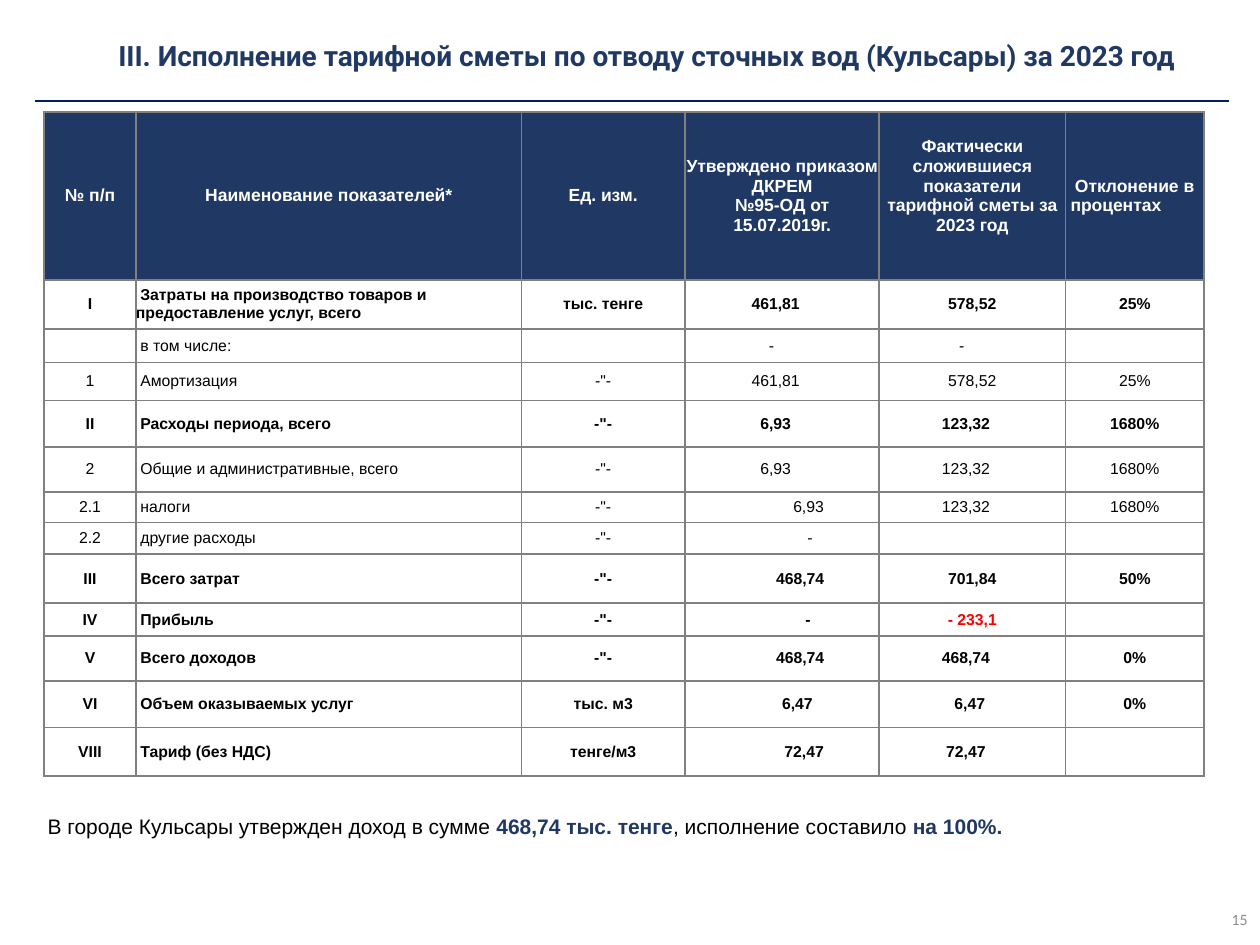
from lxml.etree import SubElement
from pptx import Presentation
from pptx.dml.color import RGBColor
from pptx.enum.shapes import MSO_CONNECTOR
from pptx.enum.text import MSO_ANCHOR, MSO_AUTO_SIZE, PP_ALIGN
from pptx.oxml.ns import qn
from pptx.util import Cm, Pt

HUES = {"navy": "203864", "rule": "002060", "grid": "808080", "red": "FF0000",
        "black": "000000", "white": "FFFFFF", "gray": "8C8C8C"}


def style(run, size, hue, bold=False, face="Arial"):
    run.font.size = Pt(size)
    run.font.name = face
    run.font.bold = bold
    run.font.color.rgb = RGBColor.from_string(HUES[hue])


def edge(cell):
    props = cell._tc.get_or_add_tcPr()
    for side in ("lnL", "lnR", "lnT", "lnB"):
        line = SubElement(props, qn(f"a:{side}"), w=str(Pt(1)))
        fill = SubElement(line, qn("a:solidFill"))
        SubElement(fill, qn("a:srgbClr"), val=HUES["grid"])


deck = Presentation()
deck.slide_width, deck.slide_height = Cm(25.4), Cm(19.05)
slide = deck.slides.add_slide(deck.slide_layouts[5])

title = slide.shapes.title
title.left, title.top, title.width, title.height = Cm(2.13), Cm(0.36), Cm(22.68), Cm(1.52)
frame = title.text_frame
frame.text = "III. Исполнение тарифной сметы по отводу сточных вод (Кульсары) за 2023 год"
frame.auto_size = MSO_AUTO_SIZE.NONE
frame.vertical_anchor = MSO_ANCHOR.MIDDLE
frame.paragraphs[0].alignment = PP_ALIGN.LEFT
style(frame.paragraphs[0].runs[0], 16, "navy", True, "Roboto")

rule = slide.shapes.add_connector(MSO_CONNECTOR.STRAIGHT, Cm(0.71), Cm(2.03), Cm(24.77), Cm(2.03))
rule.line.color.rgb = RGBColor.from_string(HUES["rule"])
rule.line.width = Pt(1)
SubElement(rule._element.spPr, qn("a:effectLst"))

heads = ["№ п/п", "Наименование показателей*", "Ед. изм.",
         "Утверждено приказом ДКРЕМ\v№95-ОД от 15.07.2019г.",
         "Фактически сложившиеся показатели тарифной сметы за\v2023 год",
         "Отклонение в процентах"]
# The last two numbers of each row shift the plan and fact values sideways, in cm.
rows = [
    ("I", "Затраты на производство товаров и предоставление услуг, всего",
     "тыс. тенге", "461,81", "578,52", "25%", -0.26, 0),
    ("", "в том числе:", "", "-", "-", "", -0.42, -0.42),
    ("1", "Амортизация", '-"-', "461,81", "578,52", "25%", -0.26, 0),
    ("II", "Расходы периода, всего", '-"-', "6,93", "123,32", "1680%", -0.26, -0.26),
    ("2", "Общие и административные, всего", '-"-', "6,93", "123,32", "1680%", -0.26, -0.26),
    ("2.1", "налоги", '-"-', "6,93", "123,32", "1680%", 1.07, -0.26),
    ("2.2", "другие расходы", '-"-', "-", "", "", 1.13, 0),
    ("III", "Всего затрат", '-"-', "468,74", "701,84", "50%", 0.73, 0),
    ("IV", "Прибыль", '-"-', "-", "- 233,1", "", 1.05, 0),
    ("V", "Всего доходов", '-"-', "468,74", "468,74", "0%", 0.73, -0.26),
    ("VI", "Объем оказываемых услуг", "тыс. м3", "6,47", "6,47", "0%", 0.62, -0.1),
    ("VIII", "Тариф (без НДС)", "тенге/м3", "72,47", "72,47", "", 0.89, -0.26),
]
wide = [1.85, 7.77, 3.3, 3.91, 3.76, 2.79]
tall = [3.38, 0.99, 0.68, 0.76, 0.94, 0.91, 0.61, 0.64, 0.99, 0.66, 0.91, 0.94, 0.97]

table = slide.shapes.add_table(len(tall), len(wide), Cm(0.89), Cm(2.26),
                               Cm(sum(wide)), Cm(sum(tall))).table
table.first_row = table.horz_banding = False
for col, size in zip(table.columns, wide):
    col.width = Cm(size)
for row, size in zip(table.rows, tall):
    row.height = Cm(size)

for r, row in enumerate([(*heads, 0, 0), *rows]):
    head = r == 0
    bold = head or row[0].isalpha()
    shifts = (0, 0, 0, *row[6:], 0)
    for c, (text, shift) in enumerate(zip(row[:6], shifts)):
        cell = table.cell(r, c)
        edge(cell)
        if head:
            cell.fill.solid()
            cell.fill.fore_color.rgb = RGBColor.from_string(HUES["navy"])
        else:
            cell.fill.background()
        cell.vertical_anchor = MSO_ANCHOR.MIDDLE
        cell.margin_top = cell.margin_bottom = 0
        cell.margin_left = Cm(max(shift, 0))
        cell.margin_right = Cm(max(-shift, 0))
        cell.text_frame.text = text
        para = cell.text_frame.paragraphs[0]
        left = c == (5 if head else 1)
        para.alignment = PP_ALIGN.LEFT if left else PP_ALIGN.CENTER
        if left:
            para._p.get_or_add_pPr().set("indent", str(Cm(0.09)))
        if not text:
            SubElement(para._p, qn("a:endParaRPr"), sz="900")
        hue = "white" if head else "red" if text.startswith("- ") else "black"
        for run in para.runs:
            style(run, 10 if head else 9, hue, bold)
table.cell(0, 4).margin_bottom = Cm(0.4)
table.cell(0, 5).margin_left = Cm(0.1)

note = slide.shapes.add_textbox(Cm(0.71), Cm(16.28), Cm(24.13), Cm(1.27)).text_frame
note.word_wrap = True
for text, bold in [("В городе Кульсары утвержден доход в сумме ", False), ("468,74 тыс. тенге", True),
                   (", исполнение составило ", False), ("на 100%.", True)]:
    run = note.paragraphs[0].add_run()
    run.text = text
    style(run, 12, "navy" if bold else "black", bold)

page = slide.shapes.add_textbox(Cm(19.69), Cm(18.03), Cm(5.71), Cm(1.02)).text_frame
page.word_wrap = True
page.vertical_anchor = MSO_ANCHOR.MIDDLE
page.text = "15"
page.paragraphs[0].alignment = PP_ALIGN.RIGHT
style(page.paragraphs[0].runs[0], 9, "gray", face="Calibri")

deck.save("out.pptx")
